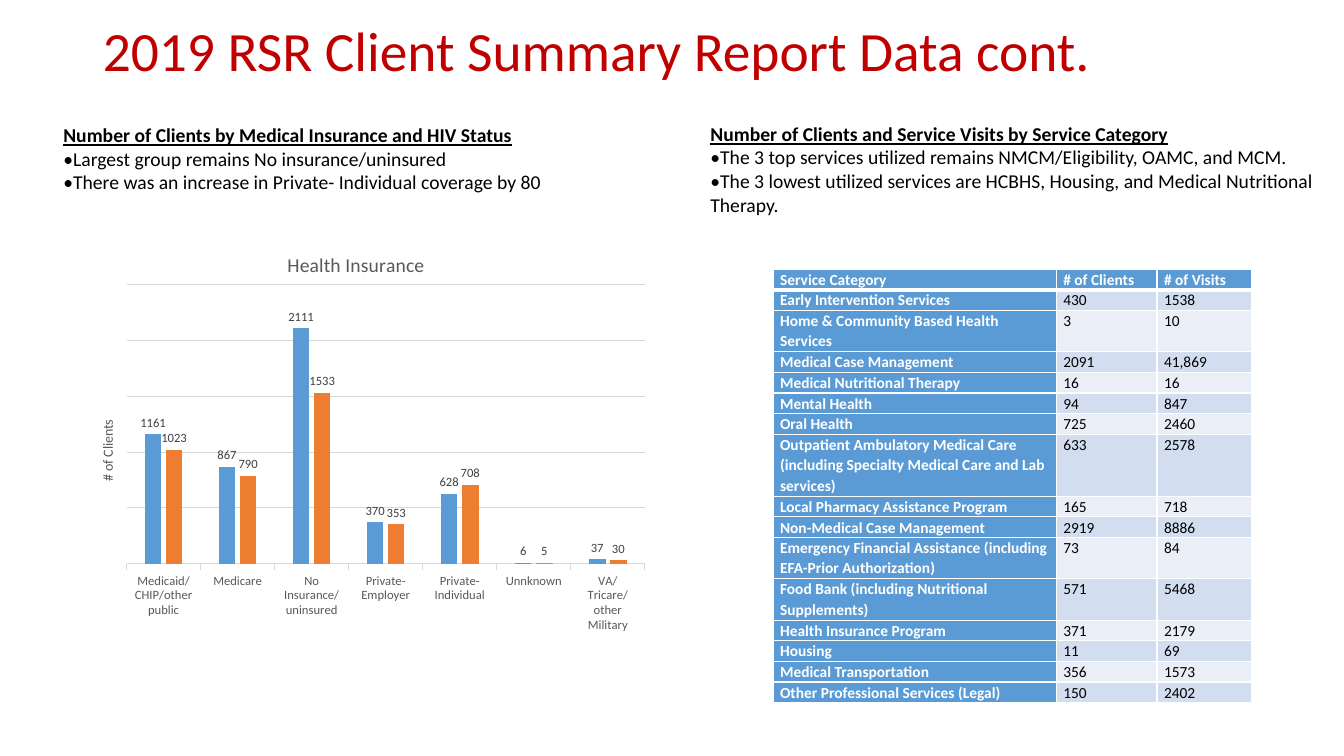
from lxml.etree import SubElement
from pptx import Presentation
from pptx.chart.data import CategoryChartData
from pptx.dml.color import RGBColor
from pptx.enum.chart import XL_CHART_TYPE, XL_LABEL_POSITION, XL_TICK_MARK
from pptx.enum.text import MSO_ANCHOR, MSO_AUTO_SIZE, PP_ALIGN
from pptx.oxml import parse_xml
from pptx.oxml.ns import nsdecls, qn
from pptx.util import Emu, Pt

FONT = "Calibri"
WHITE = RGBColor(0xFF, 0xFF, 0xFF)
BLACK = RGBColor(0x00, 0x00, 0x00)
RED = RGBColor(0xC0, 0x00, 0x00)
BLUE = RGBColor(0x5B, 0x9B, 0xD5)
ORANGE = RGBColor(0xED, 0x7D, 0x31)
BAND_DARK = RGBColor(0xD2, 0xDE, 0xEF)
BAND_LIGHT = RGBColor(0xEA, 0xEF, 0xF7)
GRID = RGBColor(0xD9, 0xD9, 0xD9)
AXIS_TEXT = RGBColor(0x59, 0x59, 0x59)
LABEL_TEXT = RGBColor(0x40, 0x40, 0x40)

COLUMNS = [562, 200, 188]
LINE_HEIGHT = 41
# Service category, clients, visits, text lines in the row
SERVICES = [
    ("Service Category", "# of Clients", "# of Visits", 1),
    ("Early Intervention Services", "430", "1538", 1),
    ("Home & Community Based Health Services", "3", "10", 2),
    ("Medical Case Management", "2091", "41,869", 1),
    ("Medical Nutritional Therapy", "16", "16", 1),
    ("Mental Health", "94", "847", 1),
    ("Oral Health", "725", "2460", 1),
    ("Outpatient Ambulatory Medical Care (including Specialty Medical Care "
     "and Lab services)", "633", "2578", 3),
    ("Local Pharmacy Assistance Program", "165", "718", 1),
    ("Non-Medical Case Management", "2919", "8886", 1),
    ("Emergency Financial Assistance (including EFA-Prior Authorization)", "73", "84", 2),
    ("Food Bank (including Nutritional Supplements)", "571", "5468", 2),
    ("Health Insurance Program", "371", "2179", 1),
    ("Housing", "11", "69", 1),
    ("Medical Transportation", "356", "1573", 1),
    ("Other Professional Services (Legal)", "150", "2402", 1),
]

INSURANCE = ["Medicaid/CHIP/other public", "Medicare", "No Insurance/uninsured",
             "Private- Employer", "Private- Individual", "Unnknown",
             "VA/Tricare/other Military"]
SERIES = [
    ("Series 1", [1161, 867, 2111, 370, 628, 6, 37], BLUE),
    ("Series 2", [1023, 790, 1533, 353, 708, 5, 30], ORANGE),
]


def px(length):
    """200 px to the inch."""
    return Emu(length * 4572)


def style(font, size, color, bold=False, underline=False):
    font.name, font.size = FONT, Pt(size)
    font.bold, font.underline = bold, underline
    font.color.rgb = color


def add_title(page, text):
    title = page.shapes.title
    title.left, title.top, title.width, title.height = px(184), px(54), px(2300), px(104)
    frame = title.text_frame
    frame.text = text
    frame.auto_size = MSO_AUTO_SIZE.NONE
    frame.vertical_anchor = MSO_ANCHOR.MIDDLE
    para = frame.paragraphs[0]
    para.alignment, para.line_spacing = PP_ALIGN.LEFT, 0.9
    style(para.runs[0].font, 39.6, RED)


def add_summary(page, left, top, width, height, lines):
    """Underlined heading followed by plain points."""
    box = page.shapes.add_textbox(px(left), px(top), px(width), px(height))
    frame = box.text_frame
    frame.word_wrap = True
    frame.auto_size = MSO_AUTO_SIZE.SHAPE_TO_FIT_TEXT
    frame.text = "\n".join(lines)
    for index, para in enumerate(frame.paragraphs):
        heading = index == 0
        style(para.runs[0].font, 14, BLACK, heading, heading)


def add_borders(cell, bottom):
    properties = cell._tc.get_or_add_tcPr()
    for side, points in (("L", 1), ("R", 1), ("T", 1), ("B", bottom)):
        properties.append(parse_xml(
            f'<a:ln{side} {nsdecls("a")} w="{Pt(points)}"><a:solidFill>'
            f'<a:srgbClr val="{WHITE}"/></a:solidFill></a:ln{side}>'))


def fill_cell(cell, text, fill, color, bold, bottom):
    cell.margin_left = cell.margin_right = px(14)
    cell.margin_top = cell.margin_bottom = 0
    cell.text = text
    para = cell.text_frame.paragraphs[0]
    para.line_spacing = 1.07
    style(para.runs[0].font, 11, color, bold)
    add_borders(cell, bottom)
    cell.fill.solid()
    cell.fill.fore_color.rgb = fill


def add_services(page):
    height = LINE_HEIGHT * sum(service[-1] for service in SERVICES)
    table = page.shapes.add_table(len(SERVICES), len(COLUMNS), px(1534), px(534),
                                  px(sum(COLUMNS)), px(height)).table
    for column, width in zip(table.columns, COLUMNS):
        column.width = px(width)
    for row, (*texts, lines) in enumerate(SERVICES):
        table.rows[row].height = px(LINE_HEIGHT * lines)
        band = BAND_DARK if row % 2 else BAND_LIGHT
        for column, text in enumerate(texts):
            header = row == 0 or column == 0
            fill_cell(table.cell(row, column), text, BLUE if header else band,
                      WHITE if header else BLACK, header, 1 if row else 3)


def set_layout(parent, **values):
    """Manual placement, as fractions of the chart."""
    layout = parent.find(qn("c:layout"))
    if layout is None:
        layout = parent.makeelement(qn("c:layout"))
        text = parent.find(qn("c:tx"))
        parent.insert(0 if text is None else parent.index(text) + 1, layout)
    manual = SubElement(layout, qn("c:manualLayout"))
    for name, value in values.items():
        SubElement(manual, qn(f"c:{name}")).set("val", str(value))


def add_heading(owner, text, size):
    frame = owner.text_frame
    frame.text = text
    style(frame.paragraphs[0].runs[0].font, size, AXIS_TEXT)


def add_insurance_chart(page):
    data = CategoryChartData()
    data.categories = INSURANCE
    for name, values, _ in SERIES:
        data.add_series(name, values)
    chart = page.shapes.add_chart(XL_CHART_TYPE.COLUMN_CLUSTERED, px(106), px(462),
                                  px(1210), px(938), data).chart
    style(chart.font, 10, BLACK)
    chart.has_legend = False
    add_heading(chart.chart_title, "Health Insurance ", 14)

    # Columns and their values
    plot = chart.plots[0]
    plot.gap_width, plot.overlap = 219, -27
    plot.vary_by_categories = False
    for series, (_, _, color) in zip(plot.series, SERIES):
        series.format.fill.solid()
        series.format.fill.fore_color.rgb = color
        labels = series.data_labels
        labels.show_value = True
        labels.position = XL_LABEL_POSITION.OUTSIDE_END
        style(labels.font, 9, LABEL_TEXT)

    # Axes
    categories = chart.category_axis
    categories.major_tick_mark = XL_TICK_MARK.OUTSIDE
    style(categories.tick_labels.font, 9, AXIS_TEXT)
    counts = chart.value_axis
    counts.minimum_scale, counts.maximum_scale, counts.major_unit = 0, 2500, 500
    counts.visible = False
    add_heading(counts.axis_title, "# of Clients", 10)
    for line in (categories.format.line, counts.major_gridlines.format.line):
        line.color.rgb = GRID
        line.width = Pt(0.75)

    set_layout(counts.axis_title._element, xMode="edge", yMode="edge", x=0.07, y=0.39)
    set_layout(chart._chartSpace.chart.plotArea, layoutTarget="inner", xMode="edge",
               yMode="edge", x=0.12, y=0.11, w=0.85, h=0.59)


def main():
    deck = Presentation()
    deck.slide_width, deck.slide_height = px(2667), px(1500)
    page = deck.slides.add_slide(deck.slide_layouts[5])
    add_services(page)
    add_title(page, "2019 RSR Client Summary Report Data cont.")
    add_summary(page, 106, 234, 1210, 256, [
        "Number of Clients by Medical Insurance and HIV Status",
        "•Largest group remains No insurance/uninsured",
        "•There was an increase in Private- Individual coverage by 80"])
    add_insurance_chart(page)
    add_summary(page, 1390, 232, 1278, 208, [
        "Number of Clients and Service Visits by Service Category",
        "•The 3 top services utilized remains NMCM/Eligibility, OAMC, and MCM.",
        "•The 3 lowest utilized services are HCBHS, Housing, and Medical Nutritional Therapy."])
    deck.save("out.pptx")


if __name__ == "__main__":
    main()
